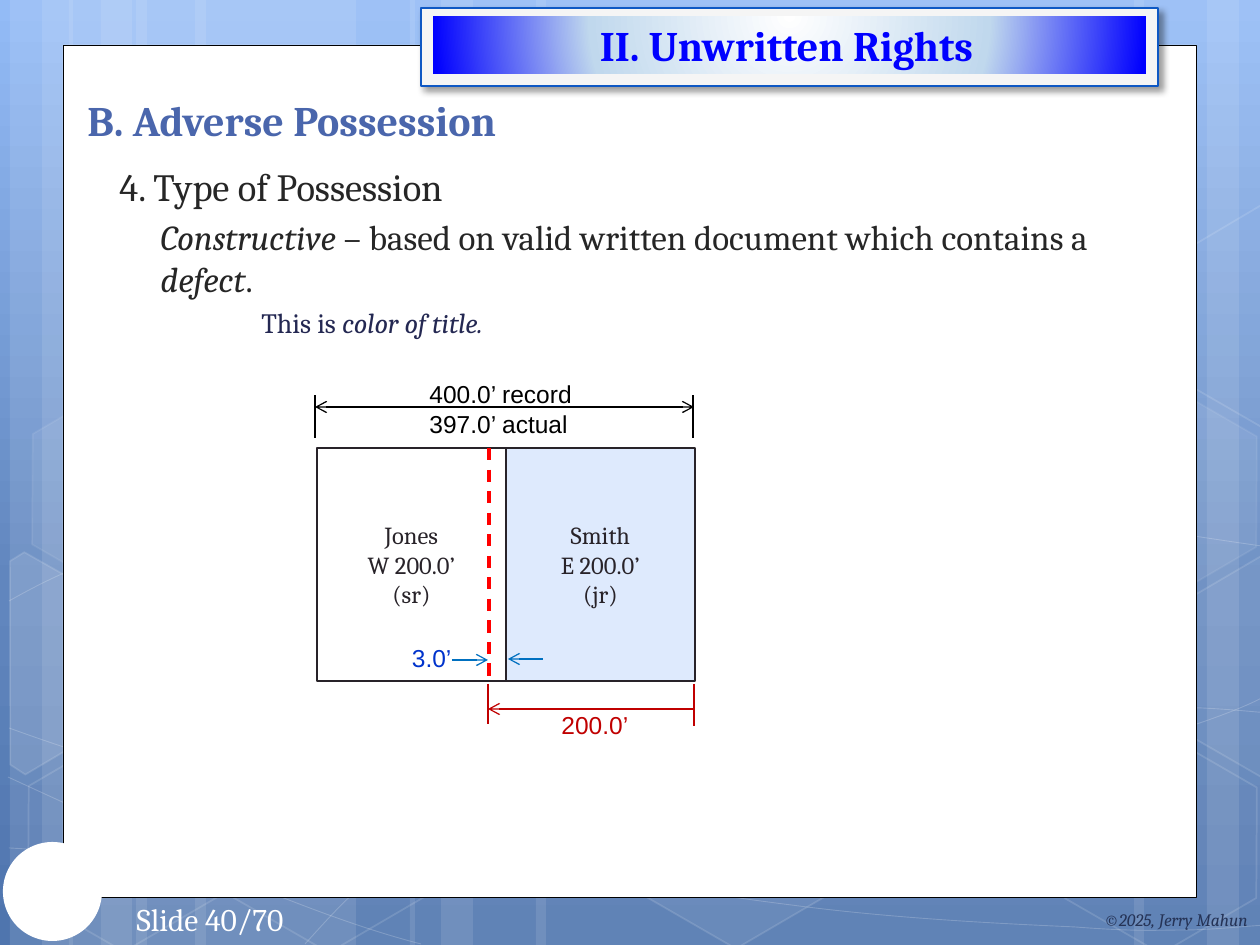
import math

import lxml.etree
import pptx
import pptx.dml.color
import pptx.enum.dml
import pptx.enum.shapes
import pptx.enum.text
import pptx.oxml
import pptx.oxml.ns
import pptx.util

PX = 914400 / 126
WIDTH, HEIGHT = 1260, 945
NAMESPACE = 'xmlns:a="http://schemas.openxmlformats.org/drawingml/2006/main"'
SHAPES = pptx.enum.shapes.MSO_SHAPE
ALIGN = pptx.enum.text.PP_ALIGN
ANCHOR = pptx.enum.text.MSO_ANCHOR
qn = pptx.oxml.ns.qn

BANDS = [(136, 220), (10, 63), (42, 105), (195, 220), (69, 63), (101, 105),
         (924, 220), (1207, 63), (1134, 105), (536, 388), (410, 63), (441, 105)]
CURVES = [
    [(9, 848), (77, 852), (145, 856), (239, 854), (334, 853), (451, 850), (577, 838),
     (703, 825), (882, 801), (998, 777), (1113, 753), (1231, 717), (1269, 694)],
    [(9, 601), (45, 581), (81, 562), (152, 543), (224, 524), (326, 496), (437, 488),
     (549, 479), (685, 478), (824, 488), (963, 498), (1193, 537), (1269, 547)],
    [(8, 777), (160, 847), (311, 916), (421, 944)],
    [(9, 728), (48, 742), (88, 756), (161, 776), (234, 795), (344, 827), (450, 848),
     (554, 869), (687, 892), (791, 905), (896, 919), (1008, 924), (1075, 927),
     (1140, 932), (1158, 930), (1191, 930), (1223, 929), (1246, 926), (1269, 925)],
    [(305, 944), (328, 919), (350, 893), (381, 871), (411, 848), (454, 823), (489, 805),
     (524, 787), (546, 780), (592, 767), (638, 754), (722, 737), (766, 728),
     (811, 719), (818, 719), (857, 717), (896, 713), (958, 709), (1000, 708),
     (1045, 707), (1116, 708), (1116, 708), (1140, 708), (1180, 708), (1201, 708),
     (1223, 709), (1245, 711), (1256, 712), (1268, 713), (1264, 712), (1268, 713)],
]
HEXAGONS = [(421, 45, 4, 8), (626, 742, 6, 12), (14, 745, None, 12), (18, 393, 7, 8),
            (219, 746, None, 12), (949, 571, 10, 12), (1051, 747, None, 12), (1051, 396, 7, 8)]
CUT_HEXAGONS = [
    ((45, 674), [(10, 561), (24, 552), (121, 607), (120, 718), (25, 774), (10, 765)], 10),
    ((1241, 655), [(1167, 611), (1261, 556), (1271, 562), (1271, 772), (1263, 777), (1167, 722)], 4),
    ((1241, 304), [(1167, 261), (1261, 205), (1273, 212), (1271, 422), (1263, 427), (1167, 372)], None),
]


def px(length):
    return pptx.util.Emu(round(length * PX))


def color(value):
    return pptx.dml.color.RGBColor.from_string(value)


def turn_back(point, center, degrees):
    """Undo a clockwise turn of a point about a center."""
    x, y = point[0] - center[0], point[1] - center[1]
    cosine, sine = math.cos(math.radians(degrees)), math.sin(math.radians(degrees))
    return round(center[0] + x * cosine + y * sine), round(center[1] - x * sine + y * cosine)


def bend(shape):
    """Turn each three line segments of a freeform into one cubic curve."""
    segments = list(shape.element.iter(qn("a:lnTo")))
    for first in range(0, len(segments), 3):
        curve, *others = segments[first:first + 3]
        cubic = lxml.etree.Element(qn("a:cubicBezTo"))
        curve.addprevious(cubic)
        for segment in (curve, *others):
            cubic.append(segment[0])
            segment.getparent().remove(segment)


def set_gradient(element, stops, direction):
    """Replace the first solid fill in an element with a gradient."""
    solid = next(element.iter(qn("a:solidFill")))
    marks = "".join(f'<a:gs pos="{position * 1000}"><a:srgbClr val="{value}"/></a:gs>'
                    for position, value in stops)
    solid.getparent().replace(solid, pptx.oxml.parse_xml(
        f'<a:gradFill {NAMESPACE} rotWithShape="1"><a:gsLst>{marks}</a:gsLst>'
        f'{direction}</a:gradFill>'))


def write(frame, text, size=14, font="Cambria", fill="000000", bold=False, italic=False,
          align=ALIGN.LEFT, indent=0, space=0):
    """Add a paragraph; text is a string or a list of (string, italic) runs."""
    paragraph = frame.paragraphs[0]
    if paragraph.runs:
        paragraph = frame.add_paragraph()
    paragraph.alignment = align
    if indent:
        paragraph._p.get_or_add_pPr().set("marL", str(px(indent)))
    if space:
        paragraph.space_before = pptx.util.Pt(space)
    for words, slanted in [(text, italic)] if isinstance(text, str) else text:
        run = paragraph.add_run()
        run.text = words
        run.font.name, run.font.size = font, pptx.util.Pt(size)
        run.font.bold, run.font.italic = bold, slanted
        run.font.color.rgb = color(fill)


class SlideBuilder:
    """Holds the shared style and the slide being drawn."""

    ink, white = "282329", "FFFFFF"

    def __init__(self, slide):
        self.slide = slide
        self.shapes = slide.shapes

    def paint(self, shape, fill, fill_alpha, line, weight, line_alpha):
        shape.shadow.inherit = False
        for target, value, alpha, place in ((shape.fill, fill, fill_alpha, "./"),
                                            (shape.line.fill, line, line_alpha, "./a:ln/")):
            if value is None:
                target.background()
                continue
            target.solid()
            target.fore_color.rgb = color(value)
            if alpha:
                node = shape.element.spPr.xpath(place + "a:solidFill/a:srgbClr")[0]
                lxml.etree.SubElement(node, qn("a:alpha")).set("val", str(alpha * 1000))
        if line:
            shape.line.width = pptx.util.Pt(weight)

    def shape(self, kind, box, fill=None, fill_alpha=None, line=None, weight=1, line_alpha=None):
        shape = self.shapes.add_shape(kind, *map(px, box))
        self.paint(shape, fill, fill_alpha, line, weight, line_alpha)
        return shape

    def outline(self, points, close, fill=None, fill_alpha=None, weight=1, line_alpha=12):
        builder = self.shapes.build_freeform(*points[0], scale=PX)
        builder.add_line_segments(points[1:], close=close)
        shape = builder.convert_to_shape()
        self.paint(shape, fill, fill_alpha, self.white, weight, line_alpha)
        return shape

    def text(self, box, *lines, wrap=True, anchor=ANCHOR.TOP, **style):
        frame = self.shapes.add_textbox(*map(px, box)).text_frame
        frame.word_wrap = wrap
        frame.vertical_anchor = anchor
        for line in lines:
            write(frame, line, **style)
        return frame

    def line(self, start, end, stroke, weight=0.75, dash=None, head=False, tail=False):
        connector = self.shapes.add_connector(
            pptx.enum.shapes.MSO_CONNECTOR.STRAIGHT, *map(px, start + end))
        connector.line.color.rgb = color(stroke)
        connector.line.width = pptx.util.Pt(weight)
        if dash:
            connector.line.dash_style = dash
        properties = connector.element.spPr
        for name, wanted in (("a:headEnd", head), ("a:tailEnd", tail)):
            if wanted:
                lxml.etree.SubElement(properties.find(qn("a:ln")), qn(name)).set("type", "arrow")
        lxml.etree.SubElement(properties, qn("a:effectLst"))

    def parcel(self, left, fill, *lines):
        shape = self.shape(SHAPES.RECTANGLE, (left, 448, 189, 233), fill, line=self.ink, weight=1.25)
        shape.text_frame.vertical_anchor = ANCHOR.MIDDLE
        for line in lines:
            write(shape.text_frame, line, fill=self.ink, align=ALIGN.CENTER)

    def backdrop(self):
        self.slide.background.fill.solid()
        set_gradient(self.slide.element, [(0, "93BBF6"), (62, "6186BE"), (100, "4F75AE")],
                     '<a:lin ang="5400000" scaled="0"/>')
        for left, width in BANDS:
            self.shape(SHAPES.RECTANGLE, (left, 0, width, HEIGHT), self.white, 10)
        for curve in CURVES:
            bend(self.outline(curve, False, weight=0.5, line_alpha=20))
        for left, top, alpha, line_alpha in HEXAGONS:
            hexagon = self.shape(SHAPES.HEXAGON, (left, top, 220, 192), self.white if alpha else None,
                                 alpha, self.white, 1, line_alpha)
            hexagon.adjustments[0] = 0.285
            hexagon.rotation = 30
        for center, corners, alpha in CUT_HEXAGONS:
            points = [turn_back(corner, center, 30) for corner in corners]
            self.outline(points, True, self.white if alpha else None, alpha).rotation = 30

    def page_frame(self):
        self.shape(SHAPES.RECTANGLE, (63, 45, 1134, 853), self.white, line="000000", weight=0.5)
        banner = self.shape(SHAPES.RECTANGLE, (421, 8, 737, 78), "F5F5F5", line="0E58C4", weight=1.25)
        banner.element.spPr.find(qn("a:effectLst")).append(pptx.oxml.parse_xml(
            f'<a:outerShdw {NAMESPACE} blurRad="50800" dist="38100" dir="2700000" algn="tl">'
            '<a:srgbClr val="000000"><a:alpha val="40000"/></a:srgbClr></a:outerShdw>'))
        glow = self.shape(SHAPES.RECTANGLE, (433, 16, 713, 58), self.white)
        set_gradient(glow.element, [(0, self.white), (56, "C0D8ED"), (100, "0000FF")],
                     '<a:path path="circle"><a:fillToRect l="50000" t="-80000" r="50000" b="180000"/></a:path>')
        self.shape(SHAPES.OVAL, (3, 842, 99, 99), self.white)
        self.text((94, 894, 232, 50), "Slide 40/70", size=18, fill=self.white, align=ALIGN.CENTER)
        self.text((554, 13, 465, 63), "II. Unwritten Rights", wrap=False, size=24,
                  fill="0000FF", bold=True, align=ALIGN.CENTER)
        self.text((1029, 895, 231, 50), "©2025, Jerry Mahun", anchor=ANCHOR.MIDDLE, size=10,
                  fill="253356", italic=True, align=ALIGN.RIGHT)

    def content(self):
        self.text((75, 92, 968, 59), "B. Adverse Possession", anchor=ANCHOR.BOTTOM,
                  size=24, fill="4A66AC", bold=True)
        body = self.text((98, 157, 1066, 670), "4. Type of Possession", size=22, fill="262626", indent=9)
        write(body, [("Constructive", True), (" – based on valid written document which contains a ", False),
                     ("defect", True), (".", False)], size=20, fill="262626", indent=50, space=3.6)
        write(body, [("This is", False), (" color of title.", True)], size=16, fill="242852",
              indent=151, space=3.2)

    def survey(self):
        red, blue, black = "C00000", "0070C0", "000000"
        self.text((549, 704, 92, 43), "200.0’", wrap=False, font="Arial", fill=red)
        self.parcel(317, self.white, "Jones", "W 200.0’", "(sr)")
        self.parcel(506, "DEEAFD", "Smith", "E 200.0’", "(jr)")
        self.line((489, 448), (489, 680), "FF0000", 1.75, pptx.enum.dml.MSO_LINE.DASH)
        for x, bottom in ((488, 724), (694, 726)):
            self.line((x, 684), (x, bottom), red)
        self.line((488, 709), (694, 709), red, head=True)
        for x in (315, 693):
            self.line((x, 438), (x, 395), black)
        self.line((315, 407), (694, 407), black, head=True, tail=True)
        self.text((417, 373, 169, 72), "400.0’ record", "397.0’ actual", wrap=False, font="Arial")
        self.line((543, 659), (508, 659), blue, tail=True)
        self.line((452, 660), (488, 660), blue, tail=True)
        self.text((398, 637, 66, 43), "3.0’", wrap=False, font="Arial", fill="0033CC", align=ALIGN.RIGHT)


def main():
    presentation = pptx.Presentation()
    presentation.slide_width, presentation.slide_height = px(WIDTH), px(HEIGHT)
    builder = SlideBuilder(presentation.slides.add_slide(presentation.slide_layouts[6]))
    builder.backdrop()
    builder.page_frame()
    builder.content()
    builder.survey()
    presentation.save("out.pptx")


if __name__ == "__main__":
    main()
